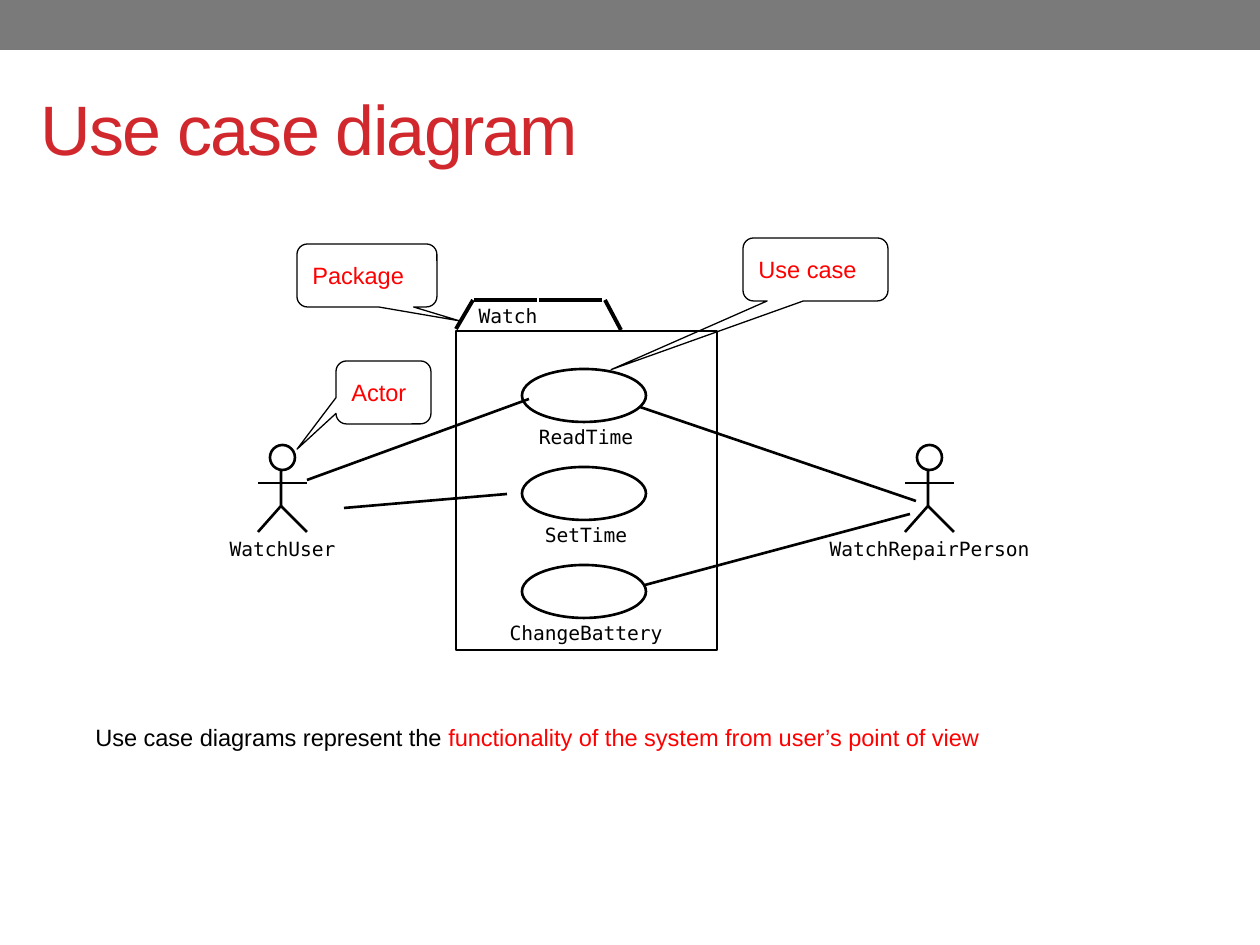
import pptx
import pptx.util
import pptx.dml.color
import pptx.enum.shapes
import pptx.enum.text
import lxml.etree

PX = 914400 / 126
SANS, MONO = "Arial", "DejaVu Sans Mono"
HUES = {"bar": "7A7A7A", "title": "D1282E", "ink": "000000",
        "note": "FF0000", "paper": "FFFFFF"}
KIND = pptx.enum.shapes.MSO_SHAPE
ALIGN = pptx.enum.text.PP_ALIGN
ANCHOR = pptx.enum.text.MSO_ANCHOR
CHAR = 11.9


def emu(*nums):
    return [round(n * PX) for n in nums]


def hue(name):
    return pptx.dml.color.RGBColor.from_string(HUES[name])


def style(font, size, tone, face=SANS):
    font.size = pptx.util.Pt(size)
    font.name = face
    font.color.rgb = hue(tone)


def paint(shape, fill=None, width=None):
    shape.shadow.inherit = False
    if fill:
        shape.fill.solid()
        shape.fill.fore_color.rgb = hue(fill)
    else:
        shape.fill.background()
    if width:
        shape.line.color.rgb = hue("ink")
        shape.line.width = pptx.util.Pt(width)
    else:
        shape.line.fill.background()
    return shape


def shape(slide, kind, box, fill=None, width=None):
    return paint(slide.shapes.add_shape(kind, *emu(*box)), fill, width)


def line(slide, start, end, width=1.5):
    link = slide.shapes.add_connector(
        pptx.enum.shapes.MSO_CONNECTOR.STRAIGHT, *emu(*start, *end))
    link.line.color.rgb = hue("ink")
    link.line.width = pptx.util.Pt(width)
    lxml.etree.SubElement(link._element.spPr, pptx.oxml.ns.qn("a:effectLst"))


def label(slide, text, mid, top):
    wide = len(text) * CHAR
    box = slide.shapes.add_textbox(*emu(mid - wide / 2, top, wide, 24))
    frame = box.text_frame
    frame.margin_left = frame.margin_right = 0
    frame.margin_top = frame.margin_bottom = 0
    frame.word_wrap = False
    para = frame.paragraphs[0]
    para.text = text
    para.alignment = ALIGN.CENTER
    style(para.font, 11.2, "ink", MONO)


def header(slide, box):
    left, top, wide, high = box
    shape(slide, KIND.RECTANGLE, (left, top, wide, 50), "bar")
    title = slide.shapes.title
    title.left, title.top, title.width, title.height = emu(
        left + 28, top + 59, 1086, high - 59)
    frame = title.text_frame
    frame.vertical_anchor = ANCHOR.MIDDLE
    para = frame.paragraphs[0]
    para.alignment = ALIGN.LEFT
    run = para.add_run()
    run.text = "Use case diagram"
    style(para.font, 40, "title")
    run.font._element.set("spc", "-100")


def actor(slide, name, box):
    left, top, wide, high = box
    spine, hip, arm = left + 23, top + 61, top + 38
    pen = slide.shapes.build_freeform(spine, top + 18, scale=PX)
    pen.add_line_segments([(spine, hip), (left, top + high)], close=False)
    paint(pen.convert_to_shape(), width=1.5)
    line(slide, (spine, hip), (left + wide, top + high))
    line(slide, (left, arm), (left + wide, arm))
    shape(slide, KIND.OVAL, (left + 12, top, 25, 25), "paper", 1.5)
    label(slide, name, left + wide / 2, top + high + 5)


def case(slide, name, box):
    left, top, wide, high = box
    shape(slide, KIND.OVAL, box, width=1.5)
    label(slide, name, left + wide / 2 + 2, top + high + 3)


def callout(slide, text, box, tip):
    note = shape(slide, KIND.ROUNDED_RECTANGULAR_CALLOUT, box, "paper", 0.75)
    for spot, value in enumerate((*tip, 0.167)):
        note.adjustments[spot] = value
    frame = note.text_frame
    frame.word_wrap = False
    frame.vertical_anchor = ANCHOR.MIDDLE
    para = frame.paragraphs[0]
    para.text = text
    para.alignment = ALIGN.LEFT
    style(para.font, 13.5, "note")


def package(slide, name, box):
    left, top, wide, high = box
    shape(slide, KIND.RECTANGLE, box, width=1.5)
    roof = top - 31
    for start, end in (((0, top - 2), (17, roof)), ((18, roof), (81, roof)),
                       ((165, top - 1), (149, roof)),
                       ((146, roof), (83, roof))):
        line(slide, (left + start[0], start[1]), (left + end[0], end[1]), 2.25)
    label(slide, name, left + 52, top - 27)


def caption(slide, box):
    frame = slide.shapes.add_textbox(*emu(*box)).text_frame
    frame.word_wrap = True
    para = frame.paragraphs[0]
    for text, tone in (
            ("Use case diagrams represent the ", "ink"),
            ("functionality of the system from user’s point of view", "note")):
        run = para.add_run()
        run.text = text
        style(run.font, 13.5, tone)


def main():
    deck = pptx.Presentation()
    deck.slide_width, deck.slide_height = emu(1260, 945)
    slide = deck.slides.add_slide(deck.slide_layouts[5])
    header(slide, (0, 0, 1260, 197))
    for name, left in (("WatchUser", 258), ("WatchRepairPerson", 905)):
        actor(slide, name, (left, 445, 49, 87))
    for row, name in enumerate(("ReadTime", "SetTime", "ChangeBattery")):
        case(slide, name, (522, 369 + 98 * row, 124, 53))
    for start, end in (((307, 480), (529, 399)), ((344, 508), (507, 494)),
                       ((645, 585), (910, 514)), ((640, 407), (916, 501))):
        line(slide, start, end)
    callout(slide, "Actor", (336, 361, 95, 63), (-0.91, 0.9))
    callout(slide, "Use case", (743, 238, 145, 63), (-1.41, 1.59))
    callout(slide, "Package", (297, 244, 140, 63), (0.66, 0.72))
    package(slide, "Watch", (456, 331, 261, 319))
    caption(slide, (83, 717, 1031, 42))
    deck.save("out.pptx")


if __name__ == "__main__":
    main()
